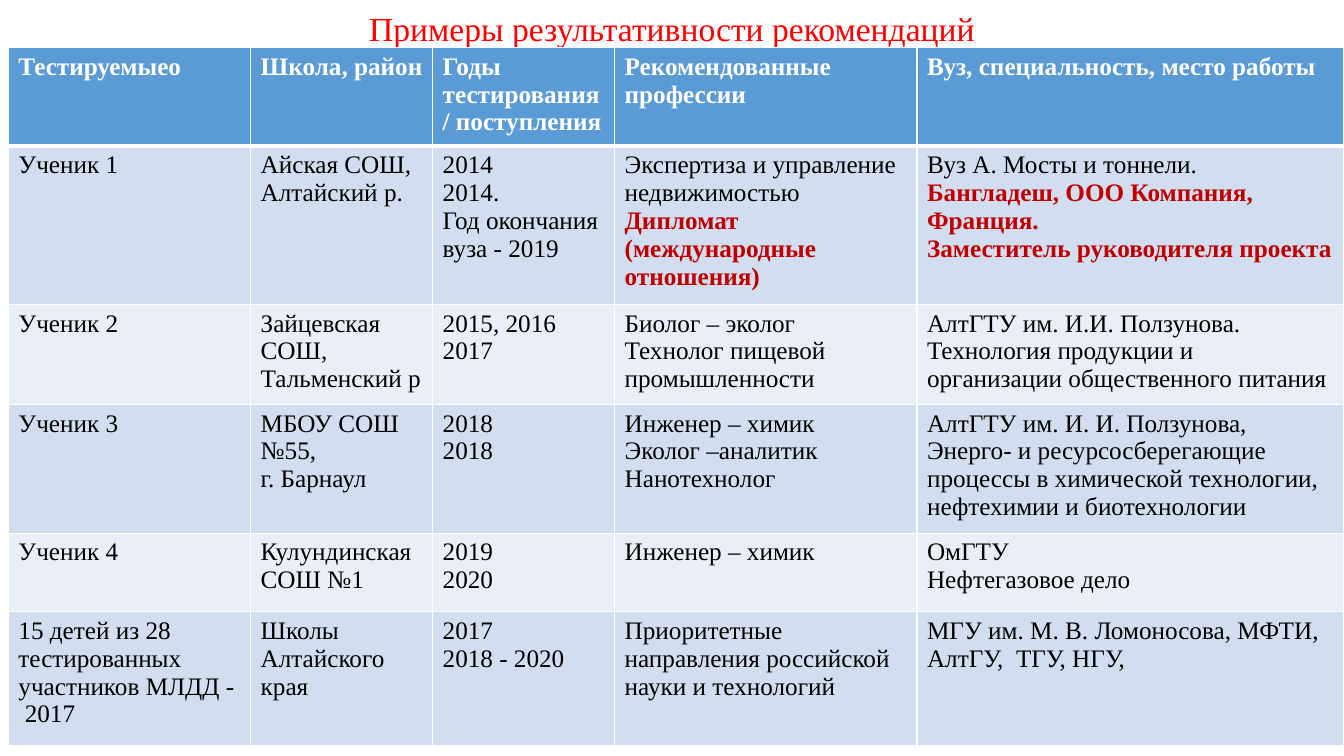
import pptx
import pptx.dml.color
import pptx.enum.text
import pptx.oxml
import pptx.oxml.ns
import pptx.util
from dataclasses import dataclass

Pt = pptx.util.Pt

# Content: a new line starts a paragraph, asterisks enclose emphasis
HEADING = "Примеры результативности рекомендаций"
COLUMNS = [
    ("Тестируемыео", 173),
    ("Школа, район", 130),
    ("Годы тестирования/ поступления", 130),
    ("Рекомендованные профессии", 216),
    ("Вуз, специальность, место работы", 305),
]
HEADER_HEIGHT = 70.5
STUDENTS = [
    (113, ["Ученик 1", "Айская СОШ, Алтайский р.",
           "2014\n2014.\nГод окончания вуза - 2019",
           "Экспертиза и управление недвижимостью *Дипломат (международные отношения)*",
           "Вуз А. Мосты и тоннели.\n*Бангладеш, ООО Компания, Франция.*\n"
           "*Заместитель руководителя проекта*"]),
    (71.5, ["Ученик 2", "Зайцевская СОШ, Тальменский р", "2015, 2016\n2017",
            "Биолог – эколог\nТехнолог пищевой промышленности",
            "АлтГТУ им. И.И. Ползунова. Технология продукции и организации "
            "общественного питания"]),
    (92, ["Ученик 3", "МБОУ СОШ №55,\nг. Барнаул", "2018\n2018",
          "Инженер – химик\nЭколог –аналитик\nНанотехнолог",
          "АлтГТУ им. И. И. Ползунова,\nЭнерго- и ресурсосберегающие процессы "
          "в химической технологии, нефтехимии и биотехнологии"]),
    (56, ["Ученик 4", "Кулундинская СОШ №1", "2019\n2020", "Инженер – химик",
          "ОмГТУ\nНефтегазовое дело"]),
    (96, ["15 детей из 28 тестированных участников МЛДД -  2017",
          "Школы Алтайского края", "2017\n2018 - 2020",
          "Приоритетные направления российской науки и технологий",
          "МГУ им. М. В. Ломоносова, МФТИ, АлтГУ,  ТГУ, НГУ,"]),
]


@dataclass(frozen=True)
class Theme:
    font: str = "Times New Roman"
    heading_size: float = 24
    table_size: float = 18
    heading: str = "FF0000"
    header_fill: str = "5B9BD5"
    header_text: str = "FFFFFF"
    bands: tuple = ("D2DEEF", "EAEFF7")
    text: str = "000000"
    emphasis: str = "C00000"
    border: str = "FFFFFF"


THEME = Theme()


def rgb(value):
    return pptx.dml.color.RGBColor.from_string(value)


def style(font, size, color, bold=False):
    font.name = THEME.font
    font.size = Pt(size)
    font.bold = bold
    font.color.rgb = rgb(color)


def add_borders(cell, bottom):
    properties = cell._tc.get_or_add_tcPr()
    widths = {"lnL": 1, "lnR": 1, "lnT": 1, "lnB": bottom}
    for position, (side, width) in enumerate(widths.items()):
        properties.insert(position, pptx.oxml.parse_xml(
            f'<a:{side} {pptx.oxml.ns.nsdecls("a")} w="{Pt(width)}"><a:solidFill>'
            f'<a:srgbClr val="{THEME.border}"/></a:solidFill></a:{side}>'))


def fill_cell(cell, content, fill, color, bold=False, bottom=1):
    cell.fill.solid()
    cell.fill.fore_color.rgb = rgb(fill)
    add_borders(cell, bottom)
    for index, line in enumerate(content.split("\n")):
        frame = cell.text_frame
        paragraph = frame.add_paragraph() if index else frame.paragraphs[0]
        style(paragraph.font, THEME.table_size, color, bold)
        for part, words in enumerate(line.split("*")):
            if words:
                run = paragraph.add_run()
                run.text = words
                if part % 2:
                    style(run.font, THEME.table_size, THEME.emphasis, True)


def main():
    deck = pptx.Presentation()
    deck.slide_width, deck.slide_height = Pt(960), Pt(540)
    slide = deck.slides.add_slide(deck.slide_layouts[5])

    # Heading
    heading = slide.shapes.title
    heading.left, heading.top, heading.width, heading.height = 0, 0, Pt(960), Pt(43.2)
    heading.text_frame.text = HEADING
    heading.text_frame.vertical_anchor = pptx.enum.text.MSO_ANCHOR.MIDDLE
    line = heading.text_frame.paragraphs[0]
    line.alignment = pptx.enum.text.PP_ALIGN.CENTER
    line.line_spacing = 0.9
    style(line.font, THEME.heading_size, THEME.heading)

    # Table frame
    widths = [width for _, width in COLUMNS]
    heights = [HEADER_HEIGHT] + [height for height, _ in STUDENTS]
    results = slide.shapes.add_table(
        len(heights), len(widths), Pt(6), Pt(34),
        Pt(sum(widths)), Pt(sum(heights))).table
    for column, width in zip(results.columns, widths):
        column.width = Pt(width)
    for row, height in zip(results.rows, heights):
        row.height = Pt(height)

    # Header row
    for index, (label, _) in enumerate(COLUMNS):
        fill_cell(results.cell(0, index), label, THEME.header_fill,
                  THEME.header_text, bold=True, bottom=3)

    # Student rows in alternating bands
    for number, (_, entries) in enumerate(STUDENTS):
        for index, entry in enumerate(entries):
            fill_cell(results.cell(number + 1, index), entry,
                      THEME.bands[number % 2], THEME.text)

    deck.save("out.pptx")


if __name__ == "__main__":
    main()
